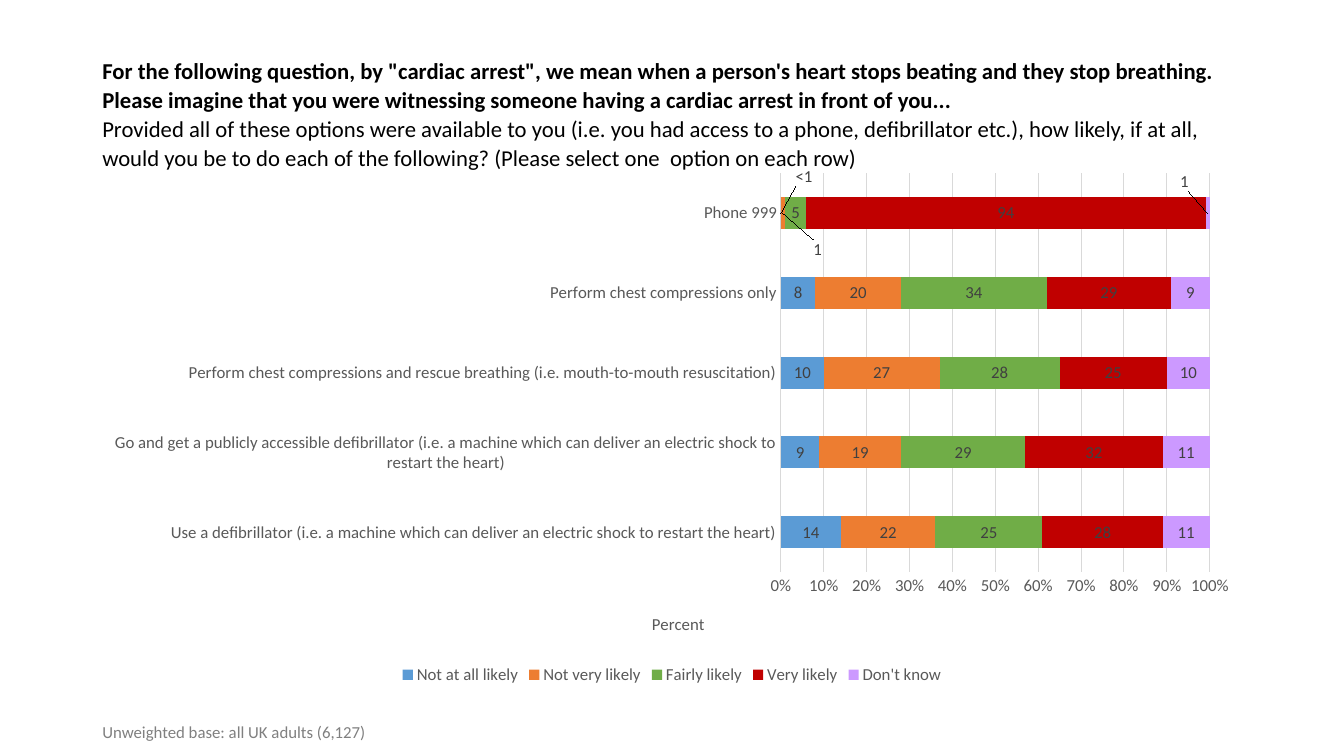
from dataclasses import dataclass
from lxml.etree import SubElement
from pptx import Presentation
from pptx.chart.chart import Chart
from pptx.chart.data import CategoryChartData
from pptx.dml.color import RGBColor
from pptx.enum.chart import XL_CHART_TYPE, XL_LEGEND_POSITION, XL_TICK_MARK
from pptx.enum.text import MSO_ANCHOR
from pptx.oxml import parse_xml
from pptx.oxml.ns import nsdecls, qn
from pptx.slide import Slide
from pptx.util import Emu, Pt

PX = 9525  # EMU per px, 96 px to the inch
FONT = "Calibri"
COLORS = {
    "black": "000000", "axis": "595959", "label": "404040", "note": "808080", "grid": "D9D9D9",
    "blue": "5B9BD5", "orange": "ED7D31", "green": "70AD47", "red": "C00000", "lilac": "CC99FF",
}


@dataclass
class Box:
    left: int
    top: int
    width: int
    height: int

    def emu(self) -> list[Emu]:
        return [Emu(v * PX) for v in (self.left, self.top, self.width, self.height)]


@dataclass
class Line:
    text: str
    bold: bool = False


@dataclass
class Answer:
    name: str
    color: str
    values: tuple[int, ...]
    phone_shift: tuple[float, float] | None = None  # label offset for the last category
    phone_text: str = ""


TITLE = [
    Line("For the following question, by \"cardiac arrest\", we mean when a person's heart stops "
         "beating and they stop breathing.", True),
    Line("Please imagine that you were witnessing someone having a cardiac arrest in front of "
         "you...", True),
    Line("Provided all of these options were available to you (i.e. you had access to a phone, "
         "defibrillator etc.), how likely, if at all, would you be to do each of the following? "
         "(Please select one  option on each row)"),
]
ACTIONS = [
    "Use a defibrillator (i.e. a machine which can deliver an electric shock to restart the heart)",
    "Go and get a publicly accessible defibrillator (i.e. a machine which can deliver an electric "
    "shock to restart the heart)",
    "Perform chest compressions and rescue breathing (i.e. mouth-to-mouth resuscitation)",
    "Perform chest compressions only",
    "Phone 999",
]
ANSWERS = [
    Answer("Not at all likely", "blue", (14, 9, 10, 8, 0), (0.02, -0.07), "<1"),
    Answer("Not very likely", "orange", (22, 19, 27, 20, 1), (0.03, 0.07)),
    Answer("Fairly likely", "green", (25, 29, 28, 34, 5)),
    Answer("Very likely", "red", (28, 32, 25, 29, 94)),
    Answer("Don't know", "lilac", (11, 11, 10, 9, 1), (-0.02, -0.06)),
]


def rgb(name: str) -> RGBColor:
    return RGBColor.from_string(COLORS[name])


def set_font(font, color: str, size: float = 12, bold: bool = False) -> None:
    for key, value in {"name": FONT, "size": Pt(size), "bold": bold}.items():
        setattr(font, key, value)
    font.color.rgb = rgb(color)


def add_text(s: Slide, box: Box, lines: list[Line], color: str, size: float, **spacing) -> None:
    tf = s.shapes.add_textbox(*box.emu()).text_frame
    tf.word_wrap = True
    tf.vertical_anchor = MSO_ANCHOR.MIDDLE
    p = tf.paragraphs[0]
    for key, value in spacing.items():
        setattr(p, key, value)
    for i, line in enumerate(lines):
        if i:
            p.add_line_break()
        r = p.add_run()
        r.text = line.text
        set_font(r.font, color, size, line.bold)


def make_layout(**values: float | str):
    layout = parse_xml(f"<c:layout {nsdecls('c')}><c:manualLayout/></c:layout>")
    for key, value in values.items():
        SubElement(layout[0], qn(f"c:{key}")).set("val", str(value))
    return layout


def replace_layout(parent, index: int, layout) -> None:
    for old in parent.findall(qn("c:layout")):
        parent.remove(old)
    parent.insert(index, layout)


def style_answer(series, answer: Answer) -> None:
    series.format.fill.solid()
    series.format.fill.fore_color.rgb = rgb(answer.color)
    labels = series.data_labels
    for key, value in {"show_value": True, "number_format": "0",
                       "number_format_is_linked": False}.items():
        setattr(labels, key, value)
    set_font(labels.font, "label")
    if answer.phone_shift is None:
        return
    label = series.points[len(ACTIONS) - 1].data_label
    if answer.phone_text:
        r = label.text_frame.paragraphs[0].add_run()
        r.text = answer.phone_text
        set_font(r.font, "label")
    else:
        set_font(label.font, "label")
    dx, dy = answer.phone_shift
    replace_layout(series._element.find(f".//{qn('c:dLbl')}"), 1, make_layout(x=dx, y=dy))


def style_axes(chart: Chart) -> None:
    for axis in (chart.category_axis, chart.value_axis):
        axis.major_tick_mark = axis.minor_tick_mark = XL_TICK_MARK.NONE
        set_font(axis.tick_labels.font, "axis")
    values = chart.value_axis
    values.has_major_gridlines = True
    for line in (chart.category_axis.format.line, values.major_gridlines.format.line):
        line.color.rgb = rgb("grid")
        line.width = Pt(0.75)
    values.format.line.fill.background()
    values.tick_labels.number_format = "0%"
    values.tick_labels.number_format_is_linked = False
    r = values.axis_title.text_frame.paragraphs[0].add_run()
    r.text = "Percent"
    set_font(r.font, "axis")
    replace_layout(values.axis_title._element, 1,
                   make_layout(xMode="edge", yMode="edge", x=0.48, y=0.85))


def add_answers_chart(s: Slide, box: Box) -> None:
    data = CategoryChartData(number_format="0")
    data.categories = ACTIONS
    for answer in ANSWERS:
        data.add_series(answer.name, answer.values)
    chart = s.shapes.add_chart(XL_CHART_TYPE.BAR_STACKED_100, *box.emu(), data).chart
    set_font(chart.font, "black")
    chart.has_title = False
    chart.has_legend = True
    chart.legend.position = XL_LEGEND_POSITION.BOTTOM
    chart.legend.include_in_layout = False
    set_font(chart.legend.font, "axis")
    plot = chart.plots[0]
    for key, value in {"gap_width": 150, "overlap": 100, "vary_by_categories": False}.items():
        setattr(plot, key, value)
    for series, answer in zip(plot.series, ANSWERS):
        style_answer(series, answer)
    style_axes(chart)
    replace_layout(chart._chartSpace.find(f".//{qn('c:plotArea')}"), 0,
                   make_layout(layoutTarget="inner", xMode="edge", yMode="edge",
                               x=0.594, y=0.018, w=0.37, h=0.76))


def main() -> None:
    prs = Presentation()
    prs.slide_width, prs.slide_height = Emu(1280 * PX), Emu(720 * PX)
    s = prs.slides.add_slide(prs.slide_layouts[6])
    # Question
    add_text(s, Box(88, 38, 1104, 139), TITLE, "black", 16.2,
             line_spacing=1.07, space_after=Pt(12))
    # Answers by action
    add_answers_chart(s, Box(88, 156, 1104, 500))
    # Base note
    add_text(s, Box(88, 682, 1155, 29), [Line("Unweighted base: all UK adults (6,127)")], "note", 12)
    prs.save("out.pptx")


if __name__ == "__main__":
    main()
